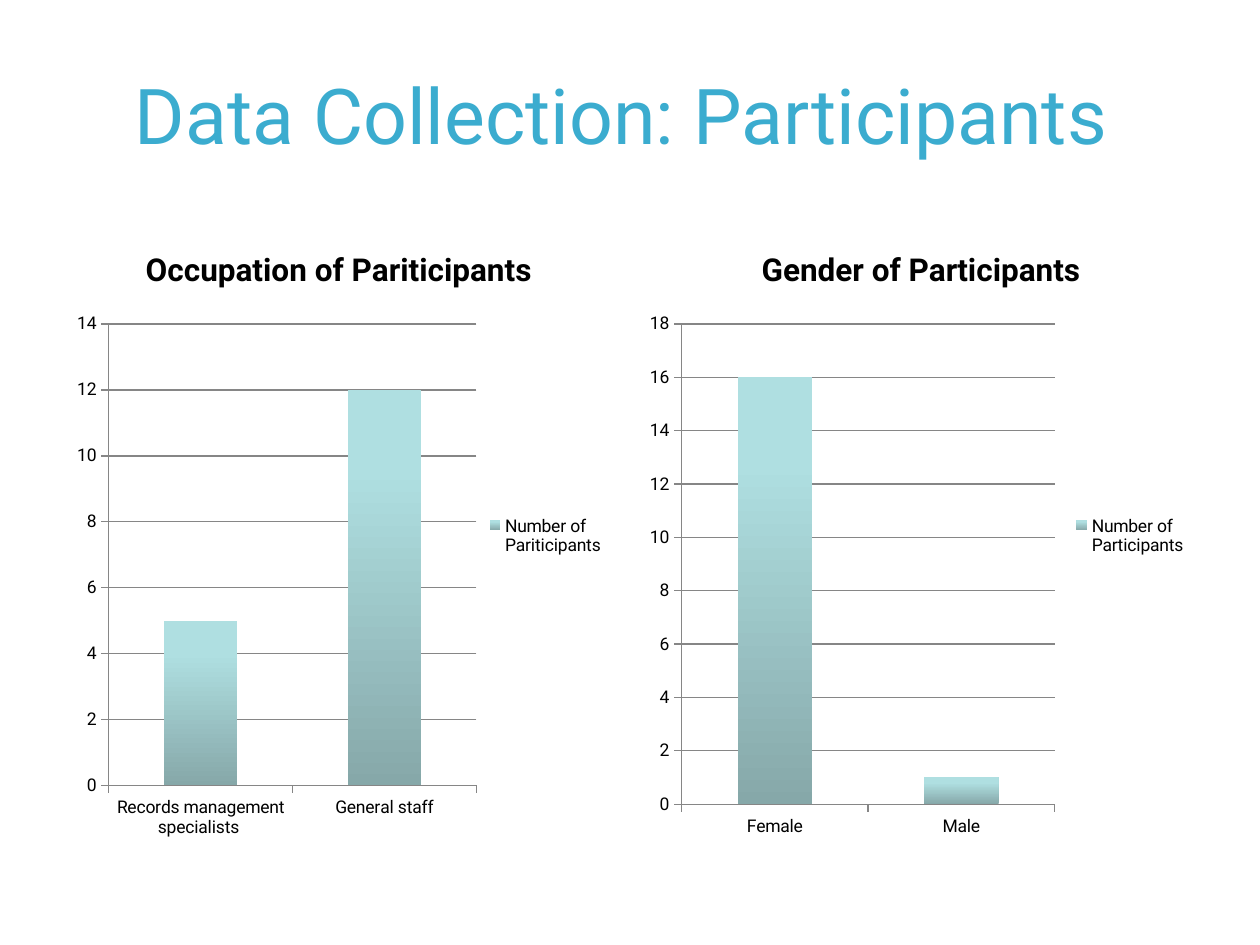
from lxml import etree
from pptx import Presentation
from pptx.chart.data import CategoryChartData
from pptx.dml.color import RGBColor
from pptx.enum.chart import XL_CHART_TYPE, XL_LEGEND_POSITION, XL_TICK_MARK
from pptx.enum.text import MSO_ANCHOR, PP_ALIGN
from pptx.oxml.ns import qn
from pptx.util import Inches, Pt

STACKED = XL_CHART_TYPE.COLUMN_STACKED
RIGHT = XL_LEGEND_POSITION.RIGHT
OUTSIDE = XL_TICK_MARK.OUTSIDE
MIDDLE, CENTER = MSO_ANCHOR.MIDDLE, PP_ALIGN.CENTER

FONT = "Roboto"
COLORS = {"title": "3BACCF", "text": "000000", "line": "868686",
          "bar_top": "AFDFE1", "bar_bottom": "86A8A9"}
MARGIN, TOP, CHART_W, CHART_H, GAP = 0.51, 1.78, 4.42, 4.95, 0.17


def rgb(name):
    return RGBColor.from_string(COLORS[name])


def style_font(font, size, color="text", bold=False):
    font.name, font.size, font.bold = FONT, Pt(size), bold
    font.color.rgb = rgb(color)


def write_text(tf, text, size, color="text", bold=False, align=CENTER):
    p = tf.paragraphs[0]
    p.alignment = align
    r = p.add_run()
    r.text = text
    style_font(r.font, size, color, bold)


def add_title(s, text, box):
    sp = s.shapes.title
    sp.left, sp.top, sp.width, sp.height = map(Inches, box)
    sp.text_frame.vertical_anchor = MIDDLE
    write_text(sp.text_frame, text, 44, "title")


def set_plot_layout(chart, shares):
    """Fix the inner plot area to x, y, w, h as shares of the chart."""
    area = chart.plots[0]._element.getparent()
    for old in area.findall(qn("c:layout")):
        area.remove(old)
    layout = etree.Element(qn("c:layout"))
    manual = etree.SubElement(layout, qn("c:manualLayout"))
    values = [("layoutTarget", "inner"), ("xMode", "edge"), ("yMode", "edge")]
    for tag, value in values + list(zip("xywh", shares)):
        etree.SubElement(manual, qn(f"c:{tag}")).set("val", str(value))
    area.insert(0, layout)


def shade_bars(series):
    fill = series.format.fill
    fill.gradient()
    fill.gradient_angle = 90
    for stop, color, position in zip(fill.gradient_stops,
                                     ("bar_bottom", "bar_top"), (0, 0.8)):
        stop.color.rgb = rgb(color)
        stop.position = position


def add_participant_chart(s, box, title, series_name, counts, plot_shares):
    data = CategoryChartData()
    data.categories = list(counts)
    data.add_series(series_name, list(counts.values()))
    chart = s.shapes.add_chart(STACKED, *map(Inches, box), data).chart
    style_font(chart.font, 10)
    chart.has_title = True
    write_text(chart.chart_title.text_frame, title, 18, bold=True)
    chart.chart_title.include_in_layout = False
    chart.has_legend = True
    chart.legend.position = RIGHT
    chart.legend.include_in_layout = False
    plot = chart.plots[0]
    plot.gap_width, plot.overlap, plot.vary_by_categories = 150, 100, False
    shade_bars(plot.series[0])
    value_axis = chart.value_axis
    value_axis.has_major_gridlines = True
    value_axis.major_unit = 2
    value_axis.minimum_scale = 0
    value_axis.maximum_scale = max(counts.values()) + 2
    for axis in (chart.category_axis, value_axis):
        axis.major_tick_mark = OUTSIDE
    for part in (chart.category_axis, value_axis, value_axis.major_gridlines):
        part.format.line.color.rgb = rgb("line")
        part.format.line.width = Pt(0.75)
    set_plot_layout(chart, plot_shares)


def main():
    prs = Presentation()
    prs.slide_width, prs.slide_height = Inches(10), Inches(7.5)
    s = prs.slides.add_slide(prs.slide_layouts[5])
    add_title(s, "Data Collection: Participants ", (MARGIN, 0.28, 9, 1.25))
    charts = [
        ("Occupation of Pariticipants ", "Number of Pariticipants ",
         {"Records management specialists ": 5, "General staff": 12},
         (0.08, 0.16, 0.66, 0.74)),
        ("Gender of Participants", "Number of Participants",
         {"Female": 16, "Male": 1}, (0.07, 0.16, 0.67, 0.77)),
    ]
    for i, chart in enumerate(charts):
        box = (MARGIN + i * (CHART_W + GAP), TOP, CHART_W, CHART_H)
        add_participant_chart(s, box, *chart)
    prs.save("out.pptx")


if __name__ == "__main__":
    main()
